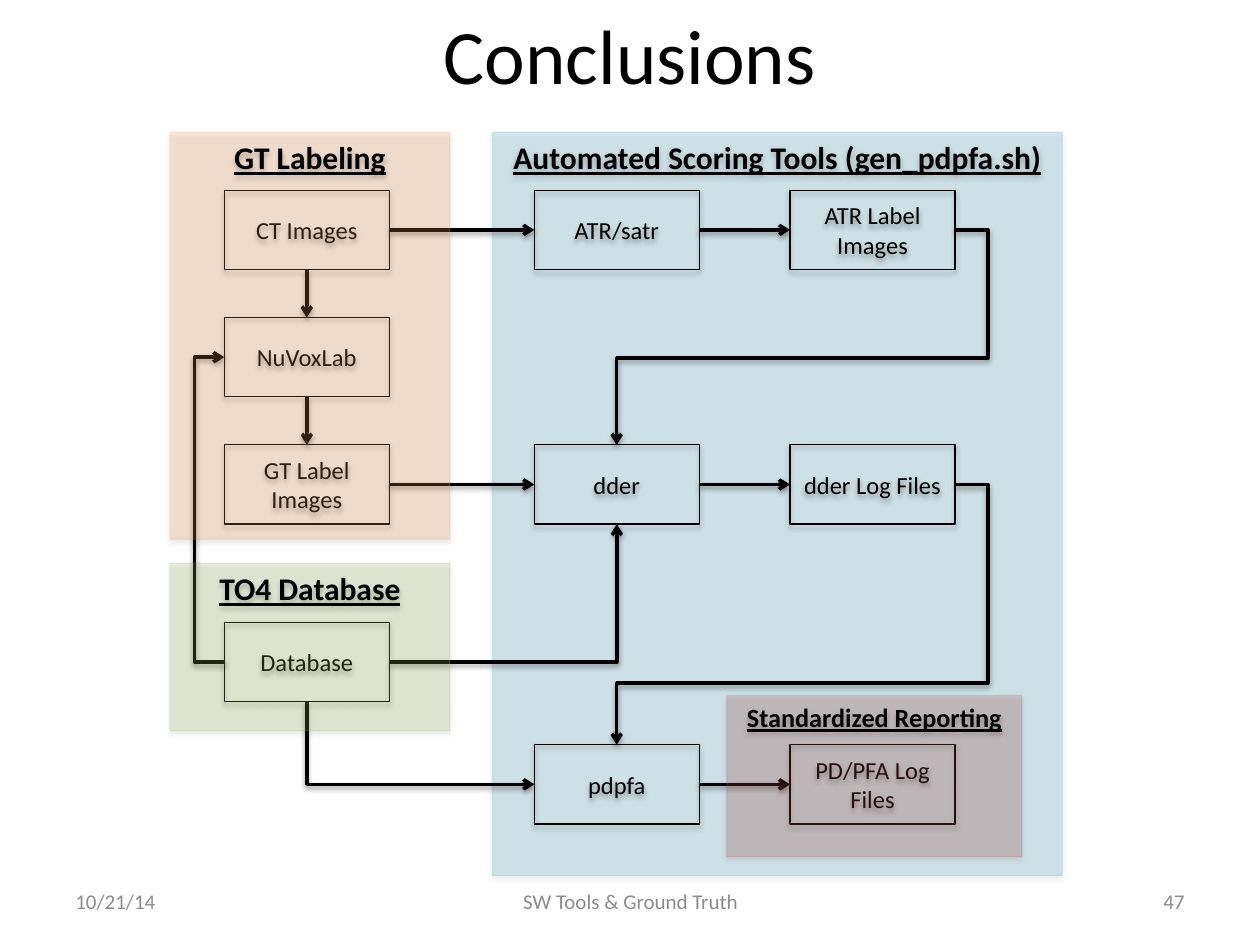
from dataclasses import dataclass

from lxml.etree import SubElement
from pptx import Presentation
from pptx.dml.color import RGBColor
from pptx.enum.shapes import MSO_CONNECTOR, MSO_SHAPE
from pptx.enum.text import MSO_ANCHOR, PP_ALIGN
from pptx.oxml.ns import qn
from pptx.util import Inches, Pt


@dataclass(frozen=True)
class Theme:
    font: str = "Calibri"
    ink: str = "000000"
    muted: str = "8C8C8C"
    orange: str = "F79646"
    green: str = "9BBB59"
    aqua: str = "4BACC6"
    red: str = "C0504D"
    title_size: float = 44
    heading_size: float = 18
    small_heading_size: float = 15
    box_size: float = 14
    footer_size: float = 12
    thin_line: float = 0.75
    arrow_line: float = 2
    panel_opacity: int = 20


# Connection sites of a rectangle
TOP, LEFT, BOTTOM, RIGHT = range(4)
BOX_WIDTH, BOX_HEIGHT = 1.31, 0.63


class FlowSlide:
    def __init__(self, slide, theme):
        self.slide = slide
        self.theme = theme

    def set_text(self, shape, text, size, color=None, align=PP_ALIGN.CENTER,
                 anchor=MSO_ANCHOR.MIDDLE, **font_format):
        frame = shape.text_frame
        frame.word_wrap = True
        frame.vertical_anchor = anchor
        paragraph = frame.paragraphs[0]
        paragraph.alignment = align
        run = paragraph.add_run()
        run.text = text
        values = {"name": self.theme.font, "size": Pt(size), **font_format}
        for name, value in values.items():
            setattr(run.font, name, value)
        run.font.color.rgb = RGBColor.from_string(color or self.theme.ink)

    def add_shadow(self, shape, opacity, distance):
        properties = shape._element.spPr
        effects = properties.find(qn("a:effectLst"))
        if effects is None:
            effects = SubElement(properties, qn("a:effectLst"))
        shadow = SubElement(effects, qn("a:outerShdw"), blurRad=str(Pt(3.1)),
                            dist=str(Pt(distance)), dir="5400000", rotWithShape="0")
        color = SubElement(shadow, qn("a:srgbClr"), val=self.theme.ink)
        SubElement(color, qn("a:alpha"), val=str(opacity * 1000))

    def title(self, text):
        title = self.slide.shapes.title
        place = {"left": 0.5, "top": -0.2, "width": 9, "height": 1.25}
        for name, value in place.items():
            setattr(title, name, Inches(value))
        self.set_text(title, text, self.theme.title_size)

    def footer(self, text, left, width, align):
        box = self.slide.shapes.add_textbox(
            Inches(left), Inches(6.95), Inches(width), Inches(0.4))
        self.set_text(box, text, self.theme.footer_size, self.theme.muted, align)

    def rectangle(self, left, top, width, height, line_color):
        shape = self.slide.shapes.add_shape(
            MSO_SHAPE.RECTANGLE, *map(Inches, (left, top, width, height)))
        shape.shadow.inherit = False
        shape.fill.background()
        shape.line.color.rgb = RGBColor.from_string(line_color)
        shape.line.width = Pt(self.theme.thin_line)
        return shape

    def panel(self, text, left, top, width, height, color, size):
        shape = self.rectangle(left, top, width, height, color)
        shape.fill.solid()
        shape.fill.fore_color.rgb = RGBColor.from_string(color)
        for node in shape._element.spPr.iter(qn("a:srgbClr")):
            SubElement(node, qn("a:alpha"), val=str(self.theme.panel_opacity * 1000))
        self.add_shadow(shape, 35, 1.8)
        self.set_text(shape, text, size, anchor=MSO_ANCHOR.TOP, bold=True, underline=True)

    def box(self, text, left, top):
        shape = self.rectangle(left, top, BOX_WIDTH, BOX_HEIGHT, self.theme.ink)
        self.add_shadow(shape, 35, 1.8)
        self.set_text(shape, text, self.theme.box_size)
        return shape

    def connector(self, kind, begin, end):
        line = self.slide.shapes.add_connector(kind, *map(Inches, (*begin, *end)))
        line.line.color.rgb = RGBColor.from_string(self.theme.ink)
        line.line.width = Pt(self.theme.arrow_line)
        SubElement(line._element.spPr.find(qn("a:ln")), qn("a:tailEnd"), type="arrow")
        self.add_shadow(line, 38, 1.6)
        return line

    def arrow(self, source, source_site, target, target_site):
        line = self.connector(MSO_CONNECTOR.STRAIGHT, (0, 0), (1, 1))
        line.begin_connect(source, source_site)
        line.end_connect(target, target_site)

    def elbow(self, begin, end, preset, bend_x=None, bend_y=None):
        """Bends are slide positions, turned into shares of the span."""
        line = self.connector(MSO_CONNECTOR.ELBOW, begin, end)
        geometry = line._element.spPr.find(qn("a:prstGeom"))
        geometry.set("prst", preset)
        guides = geometry.get_or_add_avLst()
        for index, bend in enumerate((bend_x, bend_y)):
            if bend is not None:
                share = (bend - begin[index]) / (end[index] - begin[index])
                SubElement(guides, qn("a:gd"), name=f"adj{index + 1}",
                           fmla=f"val {round(share * 100000)}")

    def elbow_down_first(self, begin, end):
        """A quarter turn swaps the spans, so the line leaves downwards."""
        center_x, center_y = ((a + b) / 2 for a, b in zip(begin, end))
        half_x, half_y = ((b - a) / 2 for a, b in zip(begin, end))
        line = self.connector(MSO_CONNECTOR.ELBOW,
                              (center_x + half_y, center_y - half_x),
                              (center_x - half_y, center_y + half_x))
        properties = line._element.spPr
        properties.find(qn("a:prstGeom")).set("prst", "bentConnector2")
        properties.find(qn("a:xfrm")).set("rot", str(270 * 60000))


def main():
    presentation = Presentation()
    presentation.slide_width, presentation.slide_height = Inches(10), Inches(7.5)
    slide = presentation.slides.add_slide(presentation.slide_layouts[5])
    theme = Theme()
    flow = FlowSlide(slide, theme)

    # Title and footer
    flow.title("Conclusions")
    flow.footer("10/21/14", 0.5, 2.33, PP_ALIGN.LEFT)
    flow.footer("SW Tools & Ground Truth", 3.42, 3.17, PP_ALIGN.CENTER)
    flow.footer("47", 7.17, 2.33, PP_ALIGN.RIGHT)

    # Panel behind the scoring flow
    flow.panel("Automated Scoring Tools (gen_pdpfa.sh)", 3.91, 1.05, 4.52, 5.9,
               theme.aqua, theme.heading_size)

    # Process boxes on a grid of columns and rows
    columns = (1.78, 4.24, 6.27)
    rows = (1.51, 2.52, 3.53, 4.94, 5.91)
    grid = {
        "CT Images": (0, 0), "ATR/satr": (1, 0), "ATR Label Images": (2, 0),
        "NuVoxLab": (0, 1),
        "GT Label Images": (0, 2), "dder": (1, 2), "dder Log Files": (2, 2),
        "Database": (0, 3),
        "pdpfa": (1, 4), "PD/PFA Log Files": (2, 4),
    }
    boxes = {text: flow.box(text, columns[column], rows[row])
             for text, (column, row) in grid.items()}

    # Straight arrows
    across = [("CT Images", "ATR/satr"), ("ATR/satr", "ATR Label Images"),
              ("GT Label Images", "dder"), ("dder", "dder Log Files"),
              ("pdpfa", "PD/PFA Log Files")]
    down = [("CT Images", "NuVoxLab"), ("NuVoxLab", "GT Label Images")]
    for source, target in across:
        flow.arrow(boxes[source], RIGHT, boxes[target], LEFT)
    for source, target in down:
        flow.arrow(boxes[source], BOTTOM, boxes[target], TOP)

    # Bent arrows
    center_x = [left + BOX_WIDTH / 2 for left in columns]
    right_x = [left + BOX_WIDTH for left in columns]
    center_y = [top + BOX_HEIGHT / 2 for top in rows]
    bottom_y = [top + BOX_HEIGHT for top in rows]
    for start_row, end_row, bend_y in ((0, 2, 2.84), (2, 4, 5.42)):
        flow.elbow((right_x[2], center_y[start_row]), (center_x[1], rows[end_row]),
                   "bentConnector4", bend_x=7.84, bend_y=bend_y)
    flow.elbow((columns[0] + 0.01, center_y[3]), (columns[0], center_y[1]),
               "bentConnector3", bend_x=1.54)
    flow.elbow((right_x[0], center_y[3]), (center_x[1], bottom_y[2]), "bentConnector2")
    flow.elbow_down_first((center_x[0], bottom_y[3]), (columns[1], center_y[4]))

    # Tinted panels over the flow
    flow.panel("GT Labeling", 1.35, 1.05, 2.22, 3.23, theme.orange, theme.heading_size)
    flow.panel("TO4 Database", 1.35, 4.47, 2.22, 1.33, theme.green, theme.heading_size)
    flow.panel("Standardized Reporting", 5.77, 5.52, 2.34, 1.28,
               theme.red, theme.small_heading_size)

    presentation.save("out.pptx")


if __name__ == "__main__":
    main()
